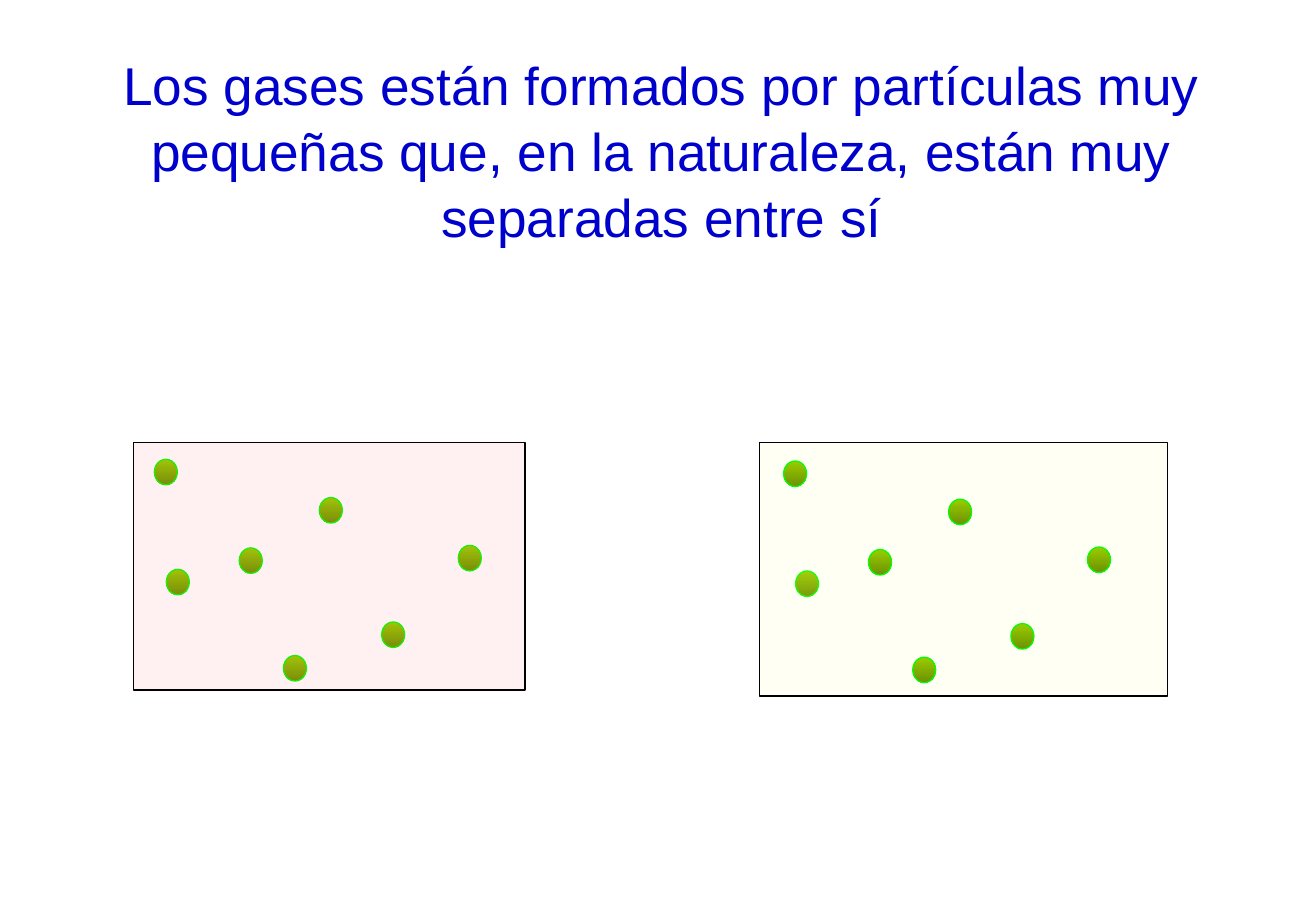
from pptx import Presentation
from pptx.dml.color import RGBColor
from pptx.enum.shapes import MSO_SHAPE
from pptx.enum.text import PP_ALIGN
from pptx.oxml.ns import qn
from pptx.util import Pt
from lxml import etree

RECTANGLE = MSO_SHAPE.RECTANGLE
OVAL = MSO_SHAPE.OVAL
CENTER = PP_ALIGN.CENTER

TITLE_BLUE = RGBColor(0x00, 0x00, 0xCC)
BLACK = RGBColor(0x00, 0x00, 0x00)
PINK = RGBColor(0xFF, 0x6D, 0x6D)
YELLOW = RGBColor(0xFF, 0xFF, 0x81)
OUTLINE_GREEN = RGBColor(0x00, 0xFF, 0x00)
LIGHT_GREEN = RGBColor(0x99, 0xCC, 0x00)
DARK_GREEN = RGBColor(0x6D, 0x92, 0x00)

TITLE = ("Los gases están formados por partículas muy pequeñas que, "
         "en la naturaleza, están muy separadas entre sí")
BOX_OPACITY = 9
PARTICLE_WIDTH, PARTICLE_HEIGHT = 13.9, 15.4
# Left and top of each particle in the first gas
PARTICLES = [(100.1, 342.7), (229.7, 374.4), (192.2, 299.5), (144, 329.8),
             (170.6, 394.6), (275.8, 328.3), (92.9, 276.5)]
SECOND_GAS_SHIFT = (378.7, 1)


def add_outlined_shape(slide, kind, left, top, width, height, line_color):
    shape = slide.shapes.add_shape(kind, Pt(left), Pt(top), Pt(width), Pt(height))
    shape.shadow.inherit = False
    shape.line.color.rgb = line_color
    shape.line.width = Pt(0.75)
    return shape


def add_container(slide, left, top, width, height, color):
    container = add_outlined_shape(slide, RECTANGLE, left, top, width, height, BLACK)
    container.fill.solid()
    container.fill.fore_color.rgb = color
    color_element = container.fill._xPr.find(qn("a:solidFill"))[0]
    alpha = etree.SubElement(color_element, qn("a:alpha"))
    alpha.set("val", str(BOX_OPACITY * 1000))


def add_particle(slide, left, top):
    particle = add_outlined_shape(slide, OVAL, left, top, PARTICLE_WIDTH,
                                  PARTICLE_HEIGHT, OUTLINE_GREEN)
    particle.fill.gradient()
    particle.fill.gradient_angle = 270
    for stop, color, position in zip(particle.fill.gradient_stops,
                                     (LIGHT_GREEN, DARK_GREEN), (0, 1)):
        stop.color.rgb = color
        stop.position = position


def add_gas(slide, container, color, shift, covered):
    """Draw a gas whose first `covered` particles lie behind the container."""
    particles = [(left + shift[0], top + shift[1]) for left, top in PARTICLES]
    for left, top in particles[:covered]:
        add_particle(slide, left, top)
    add_container(slide, *container, color)
    for left, top in particles[covered:]:
        add_particle(slide, left, top)


def add_title(slide, left, top, width, height):
    title = slide.shapes.add_textbox(Pt(left), Pt(top), Pt(width), Pt(height))
    frame = title.text_frame
    frame.word_wrap = True
    frame.margin_top = Pt(6)
    paragraph = frame.paragraphs[0]
    paragraph.alignment = CENTER
    paragraph.line_spacing = 1.04
    run = paragraph.add_run()
    run.text = TITLE
    run.font.name = "Arial"
    run.font.size = Pt(32)
    run.font.color.rgb = TITLE_BLUE


def main():
    presentation = Presentation()
    presentation.slide_width = Pt(792)
    presentation.slide_height = Pt(540)
    slide = presentation.slides.add_slide(presentation.slide_layouts[6])
    add_gas(slide, (80.6, 266.4, 235.4, 149), PINK, (0, 0), len(PARTICLES))
    add_gas(slide, (457.2, 266.4, 245.5, 152.6), YELLOW, SECOND_GAS_SHIFT, 1)
    add_title(slide, 41.8, 23.8, 712.8, 156.2)
    presentation.save("out.pptx")


if __name__ == "__main__":
    main()
